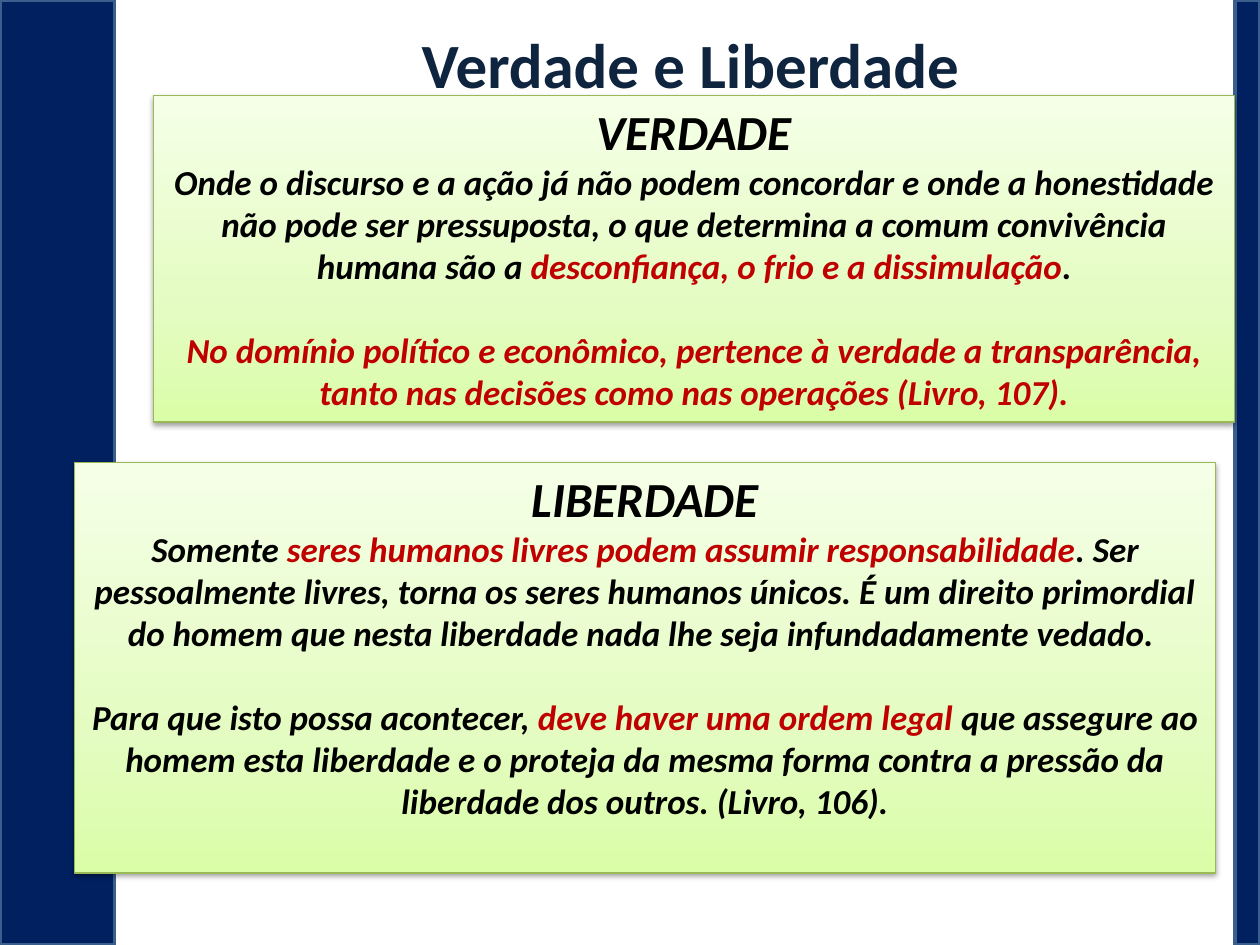
"""Build the slide on truth and freedom."""
from copy import deepcopy

from pptx import Presentation
from pptx.dml.color import RGBColor
from pptx.enum.shapes import MSO_SHAPE as Shape
from pptx.enum.text import MSO_ANCHOR as Anchor, PP_ALIGN as Align
from pptx.oxml import parse_xml
from pptx.oxml.ns import nsdecls, qn
from pptx.util import Inches, Pt

COLORS = {
    "navy": "002060", "bar_line": "3A5F8C", "title": "0F243E",
    "black": "000000", "red": "C00000", "box_line": "98B955",
    "lime": "DAFDA7", "pale_lime": "E4FCC2", "mist": "F5FFE7",
}
GRADIENT = [(0, "lime"), (0.35, "pale_lime"), (1, "mist")]
SHADOW = (
    f'<a:outerShdw {nsdecls("a")} blurRad="{Pt(3.1)}" dist="{Pt(1.6)}" dir="5400000" '
    f'rotWithShape="0"><a:srgbClr val="{COLORS["black"]}"><a:alpha val="38000"/>'
    '</a:srgbClr></a:outerShdw>'
)


def rgb(name):
    """Return the named colour."""
    return RGBColor.from_string(COLORS[name])


def add_span(para, text, size=20, color="black", bold=True, italic=True, font="Calibri"):
    """Add a formatted run to a paragraph."""
    span = para.add_run()
    span.text = text
    span.font.name = font
    span.font.size = Pt(size)
    span.font.bold = bold
    span.font.italic = italic
    span.font.color.rgb = rgb(color)


class SlideBuilder:
    """Hold the current slide and draw its elements in one style."""

    def __init__(self, slide):
        """Keep the slide to draw on."""
        self.slide = slide

    def rectangle(self, left, top, width, height, line, line_width):
        """Add an outlined rectangle without a shadow."""
        box = self.slide.shapes.add_shape(
            Shape.RECTANGLE, Inches(left), Inches(top), Inches(width), Inches(height))
        box.shadow.inherit = False
        box.line.color.rgb = rgb(line)
        box.line.width = Pt(line_width)
        return box

    def bar(self, left, width):
        """Add a full-height side bar."""
        bar = self.rectangle(left, 0, width, 7.5, "bar_line", 2)
        bar.fill.solid()
        bar.fill.fore_color.rgb = rgb("navy")

    def title(self, text, left, top, width, height):
        """Place and format the title placeholder."""
        title = self.slide.shapes.title
        title.left, title.top = Inches(left), Inches(top)
        title.width, title.height = Inches(width), Inches(height)
        title.text_frame.vertical_anchor = Anchor.MIDDLE
        para = title.text_frame.paragraphs[0]
        para.alignment = Align.CENTER
        add_span(para, text, size=36, color="title", italic=False)

    def panel(self, left, top, width, height, heading, paragraphs):
        """Add a shaded green box with a heading and body paragraphs."""
        box = self.rectangle(left, top, width, height, "box_line", 0.75)
        box.fill.gradient()
        box.fill.gradient_angle = 90
        properties = box.fill._xPr
        stop_list = properties.find(f'.//{qn("a:gsLst")}')
        stop_list.insert(1, deepcopy(stop_list[0]))
        for stop, (position, color) in zip(box.fill.gradient_stops, GRADIENT):
            stop.position = position
            stop.color.rgb = rgb(color)
        properties.find(qn("a:effectLst")).append(parse_xml(SHADOW))

        frame = box.text_frame
        frame.word_wrap = True
        frame.vertical_anchor = Anchor.TOP
        para = frame.paragraphs[0]
        para.alignment = Align.CENTER
        add_span(para, heading, size=28)
        for index, spans in enumerate(paragraphs):
            para = frame.add_paragraph()
            para.alignment = Align.CENTER
            para.space_before = Pt(24 if index else 0)
            for text, color in spans:
                add_span(para, text, color=color)


def main():
    """Create the deck and save it."""
    deck = Presentation()
    deck.slide_width, deck.slide_height = Inches(10), Inches(7.5)
    page = SlideBuilder(deck.slides.add_slide(deck.slide_layouts[5]))
    page.bar(0, 0.91)
    page.bar(9.8, 0.2)
    page.title("Verdade e Liberdade", 1.3, 0.13, 8.36, 0.75)
    page.panel(1.22, 0.76, 8.58, 2.59, "VERDADE", [
        [("Onde o discurso e a ação já não podem concordar e onde a honestidade não pode "
          "ser pressuposta, o que determina a comum convivência humana são a ", "black"),
         ("desconfiança, o frio e a dissimulação", "red"),
         (".", "black")],
        [("No domínio político e econômico, pertence à verdade a transparência, tanto nas "
          "decisões como nas operações (Livro, 107).", "red")],
    ])
    page.panel(0.59, 3.67, 9.06, 3.26, "LIBERDADE", [
        [("Somente ", "black"),
         ("seres humanos livres podem assumir responsabilidade", "red"),
         (". Ser pessoalmente livres, torna os seres humanos únicos. É um direito primordial "
          "do homem que nesta liberdade nada lhe seja infundadamente vedado. ", "black")],
        [("Para que isto possa acontecer, ", "black"),
         ("deve haver uma ordem legal", "red"),
         (" que assegure ao homem esta liberdade e o proteja da mesma forma contra a pressão "
          "da liberdade dos outros. (Livro, 106).", "black")],
    ])
    deck.save("out.pptx")


if __name__ == "__main__":
    main()
